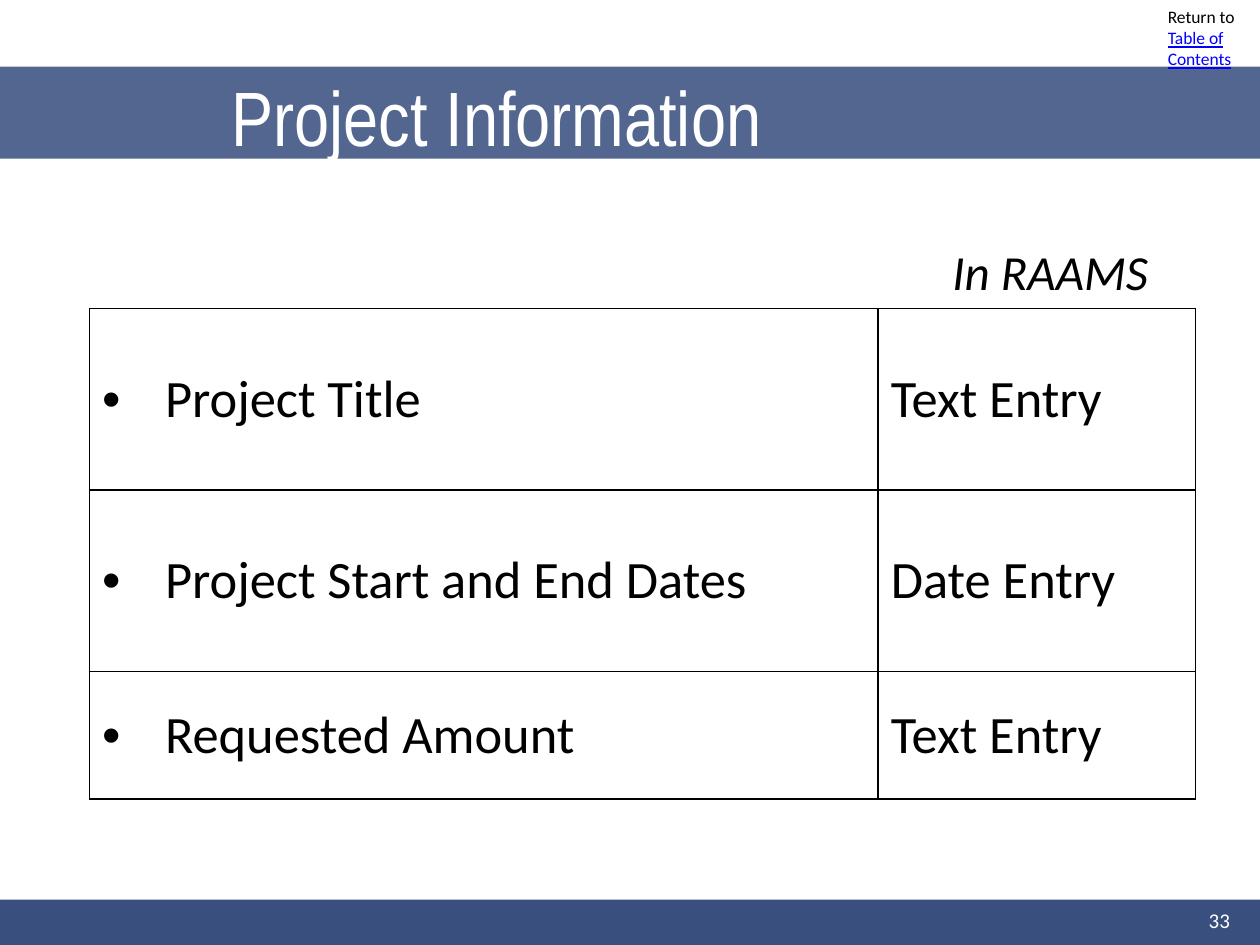
from pptx import Presentation
from pptx.dml.color import RGBColor
from pptx.enum.shapes import MSO_SHAPE as SHAPE
from pptx.enum.text import MSO_ANCHOR as ANCHOR, PP_ALIGN as ALIGN
from pptx.oxml.ns import qn
from pptx.util import Inches, Pt
from lxml.etree import SubElement

NAVY = RGBColor(0x39, 0x50, 0x7F)
BLACK = RGBColor(0, 0, 0)
WHITE = RGBColor(255, 255, 255)
LINK = RGBColor(0, 0, 255)

# Content
TITLE = "Project Information"
SYSTEM = "In RAAMS"
PAGE = "33"
FIELDS = [
    ("Project Title", "Text Entry"),
    ("Project Start and End Dates", "Date Entry"),
    ("Requested Amount", "Text Entry"),
]
COLS = (6.26, 2.52)
ROWS = (1.44, 1.44, 1.01)

prs = Presentation()
prs.slide_width, prs.slide_height = Inches(10), Inches(7.5)
s = prs.slides.add_slide(prs.slide_layouts[6])


def add_band(top, height, opacity=None):
    sp = s.shapes.add_shape(SHAPE.RECTANGLE, 0, Inches(top), prs.slide_width, Inches(height))
    sp.shadow.inherit = False
    sp.fill.solid()
    sp.fill.fore_color.rgb = NAVY
    sp.line.fill.background()
    if opacity:
        color = sp.fill._xPr.find(qn("a:solidFill"))[0]
        SubElement(color, qn("a:alpha")).set("val", str(opacity * 1000))


def add_run(p, text, size, color=BLACK, font="Calibri", italic=None, underline=None):
    r = p.add_run()
    r.text = text
    r.font.size, r.font.name, r.font.color.rgb = Pt(size), font, color
    r.font.italic, r.font.underline = italic, underline


def add_text(box, text, size, align=ALIGN.LEFT, anchor=ANCHOR.TOP, **style):
    tf = s.shapes.add_textbox(*(Inches(v) for v in box)).text_frame
    tf.word_wrap = True
    tf.vertical_anchor = anchor
    p = tf.paragraphs[0]
    p.alignment = align
    add_run(p, text, size, **style)
    return p


def add_bullet(p, indent):
    pPr = p._p.get_or_add_pPr()
    pPr.set("marL", str(Inches(indent)))
    pPr.set("indent", str(-Inches(indent)))
    SubElement(pPr, qn("a:buFont")).set("typeface", "Arial")
    SubElement(pPr, qn("a:buChar")).set("char", "•")


def add_borders(cell):
    tcPr = cell._tc.get_or_add_tcPr()
    for i, side in enumerate(("lnL", "lnR", "lnT", "lnB")):
        ln = tcPr.makeelement(qn(f"a:{side}"), {"w": str(Pt(1))})
        fill = SubElement(ln, qn("a:solidFill"))
        SubElement(fill, qn("a:srgbClr")).set("val", str(BLACK))
        tcPr.insert(i, ln)


# Footer and title bands
add_band(7.14, 0.38)
add_band(0.53, 0.73, opacity=87)

# Corner note, title and column heading
note = add_text((9.17, 0, 0.83, 0.61), "Return to ", 10)
add_run(note, "Table of Contents", 10, color=LINK, underline=True)
add_text((1.74, 0.29, 4.9, 1.25), TITLE, 44, anchor=ANCHOR.MIDDLE,
         color=WHITE, font="Arial Narrow")
add_text((0.17, 1.87, 9.04, 0.55), SYSTEM, 28, align=ALIGN.RIGHT, italic=True)

# Field table
table = s.shapes.add_table(len(ROWS), len(COLS), Inches(0.71), Inches(2.45),
                           Inches(sum(COLS)), Inches(sum(ROWS))).table
table.first_row = table.horz_banding = False
for col, width in zip(table.columns, COLS):
    col.width = Inches(width)
for row, height, texts in zip(table.rows, ROWS, FIELDS):
    row.height = Inches(height)
    for c, (cell, text) in enumerate(zip(row.cells, texts)):
        cell.fill.background()
        cell.vertical_anchor = ANCHOR.MIDDLE
        add_borders(cell)
        p = cell.text_frame.paragraphs[0]
        if c == 0:
            add_bullet(p, 0.5)
        add_run(p, text, 30)

# Page number
add_text((7.53, 7.1, 2.33, 0.4), PAGE, 12, align=ALIGN.RIGHT,
         anchor=ANCHOR.MIDDLE, color=WHITE)

prs.save("out.pptx")
